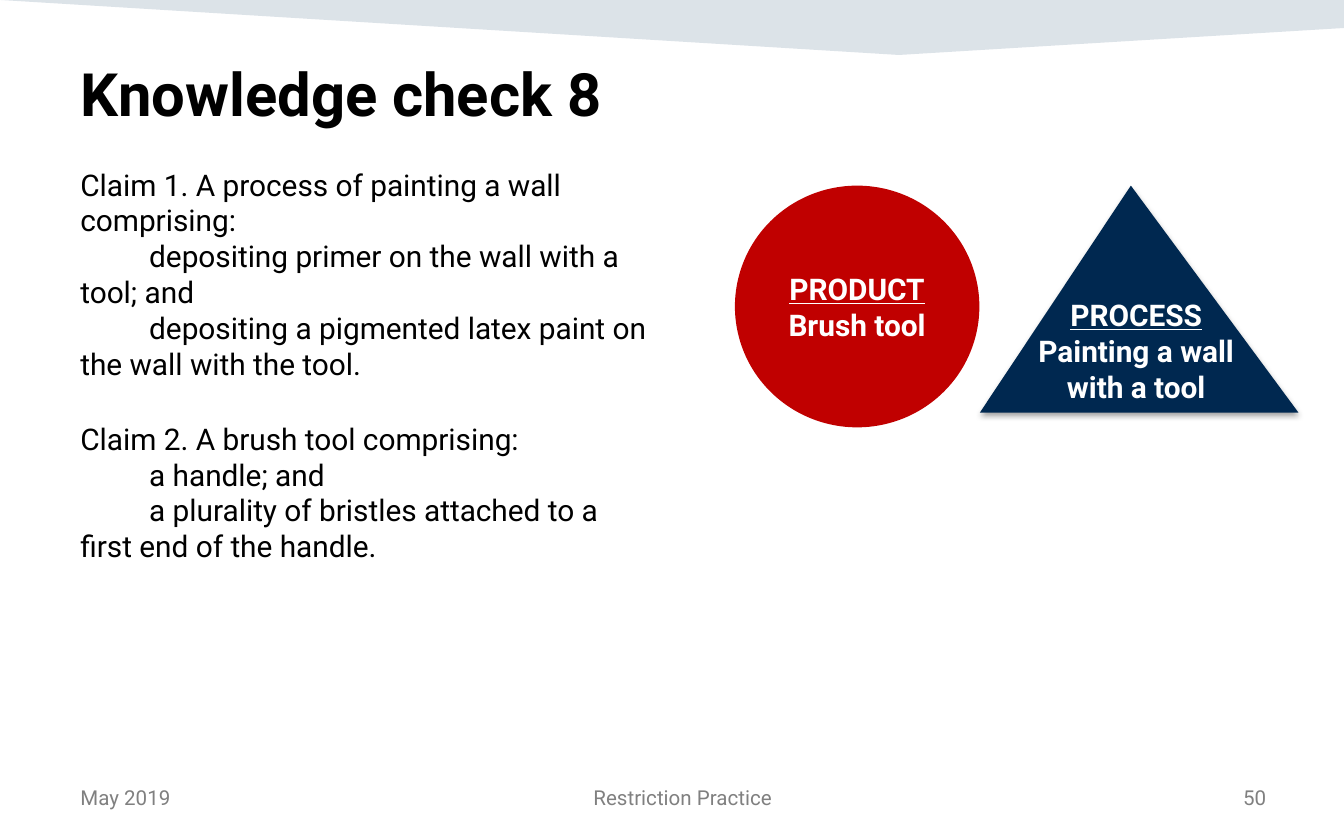
from lxml import etree
from pptx import Presentation
from pptx.dml.color import RGBColor
from pptx.enum.shapes import MSO_SHAPE
from pptx.enum.text import MSO_ANCHOR, PP_ALIGN
from pptx.oxml.ns import qn
from pptx.util import Cm, Pt

OVAL, TRIANGLE = MSO_SHAPE.OVAL, MSO_SHAPE.ISOSCELES_TRIANGLE
LEFT, CENTER, RIGHT = PP_ALIGN.LEFT, PP_ALIGN.CENTER, PP_ALIGN.RIGHT
TOP, MIDDLE, BOTTOM = MSO_ANCHOR.TOP, MSO_ANCHOR.MIDDLE, MSO_ANCHOR.BOTTOM

BLACK = RGBColor(0x00, 0x00, 0x00)
WHITE = RGBColor(0xFF, 0xFF, 0xFF)
GRAY = RGBColor(0x80, 0x80, 0x80)
RED = RGBColor(0xC0, 0x00, 0x00)
NAVY = RGBColor(0x00, 0x28, 0x50)
BLUE = RGBColor(0x16, 0x44, 0x69)

FONT = "Roboto"
WIDTH, HEIGHT = 25.4, 15.88
MARGIN = 1.27
INDENT = Cm(1.3)

CLAIMS = [
    ("Claim 1. A process of painting a wall comprising:",
     ["depositing primer on the wall with a tool; and",
      "depositing a pigmented latex paint on the wall with the tool."]),
    ("Claim 2. A brush tool comprising:",
     ["a handle; and",
      "a plurality of bristles attached to a first end of the handle."]),
]

# Left, width, alignment and text of each footer part
FOOTER = [
    (MARGIN, 3.84, LEFT, "May 2019"),
    (5.26, 15.29, CENTER, "Restriction Practice"),
    (20.75, 3.43, RIGHT, "50"),
]


def add_text(frame, text, size=16, color=BLACK, bold=False, under=False,
             align=LEFT, indent=0, before=0):
    """Append one paragraph, using the first one while it is empty."""
    para = frame.paragraphs[0]
    if para.runs:
        para = frame.add_paragraph()
    para.alignment = align
    para.space_before = Pt(before)
    if indent:
        props = para._p.get_or_add_pPr()
        props.set("marL", "0")
        props.set("indent", str(indent))
    run = para.add_run()
    run.text = text
    font = run.font
    font.name, font.size, font.bold = FONT, Pt(size), bold
    font.underline = under
    font.color.rgb = color


def add_box(slide, left, top, width, height, anchor=TOP, wrap=True):
    box = slide.shapes.add_textbox(Cm(left), Cm(top), Cm(width), Cm(height))
    frame = box.text_frame
    frame.word_wrap = wrap
    frame.vertical_anchor = anchor
    return frame


def add_shape(slide, kind, left, top, width, height, color):
    shape = slide.shapes.add_shape(
        kind, Cm(left), Cm(top), Cm(width), Cm(height))
    paint(shape, color)
    return shape


def paint(shape, color):
    shape.shadow.inherit = False
    shape.fill.solid()
    shape.fill.fore_color.rgb = color
    shape.line.fill.background()


def set_alpha(node, percent):
    etree.SubElement(node, qn("a:alpha"), val=str(percent * 1000))


def add_shadow(shape):
    """Cast a soft shadow straight down."""
    effects = shape._element.spPr.find(qn("a:effectLst"))
    shade = etree.SubElement(
        effects, qn("a:outerShdw"), blurRad=str(Pt(3.1)), dist=str(Pt(1.8)),
        dir="5400000", algn="ctr", rotWithShape="0")
    set_alpha(etree.SubElement(shade, qn("a:srgbClr"), val=str(BLACK)), 35)


def add_band(slide):
    points = [(WIDTH, 0), (WIDTH, 0.53), (16.99, 1.04)]
    pen = slide.shapes.build_freeform(0, 0)
    pen.add_line_segments([(Cm(x), Cm(y)) for x, y in points], close=True)
    band = pen.convert_to_shape()
    paint(band, BLUE)
    fill = band._element.spPr.find(qn("a:solidFill"))
    set_alpha(fill.find(qn("a:srgbClr")), 15)


def add_claims(slide):
    frame = add_box(slide, MARGIN, 3.02, 11.23, 11.25)
    for i, (claim, steps) in enumerate(CLAIMS):
        add_text(frame, claim, before=21 if i else 0)
        for step in steps:
            add_text(frame, step, indent=INDENT)


def add_label(frame, head, *lines):
    """Write an underlined heading over bold white lines."""
    add_text(frame, head, color=WHITE, bold=True, under=True, align=CENTER)
    for line in lines:
        add_text(frame, line, color=WHITE, bold=True, align=CENTER)


def main():
    deck = Presentation()
    deck.slide_width, deck.slide_height = Cm(WIDTH), Cm(HEIGHT)
    slide = deck.slides.add_slide(deck.slide_layouts[6])

    # Top band and title
    add_band(slide)
    title = add_box(slide, MARGIN, 1.04, 22.86, 1.52, anchor=BOTTOM)
    add_text(title, "Knowledge check 8", size=32, bold=True)

    # Claims
    add_claims(slide)

    # Process triangle, with its label in a box of its own
    process = add_shape(slide, TRIANGLE, 18.52, 3.51, 6.02, 4.29, NAVY)
    process.adjustments[0] = 0.474
    add_shadow(process)
    label = add_box(slide, 19.25, 5.49, 4.45, 2.31, wrap=False)
    add_label(label, "PROCESS", "Painting a wall", "with a tool")

    # Product circle
    product = add_shape(slide, OVAL, 13.89, 3.51, 4.62, 4.57, RED)
    frame = product.text_frame
    frame.word_wrap = False
    frame.vertical_anchor = MIDDLE
    add_label(frame, "PRODUCT", "Brush tool")

    # Footer
    for left, width, align, text in FOOTER:
        frame = add_box(slide, left, 14.71, width, 0.84)
        add_text(frame, text, size=11, color=GRAY, align=align)

    deck.save("out.pptx")


if __name__ == "__main__":
    main()
